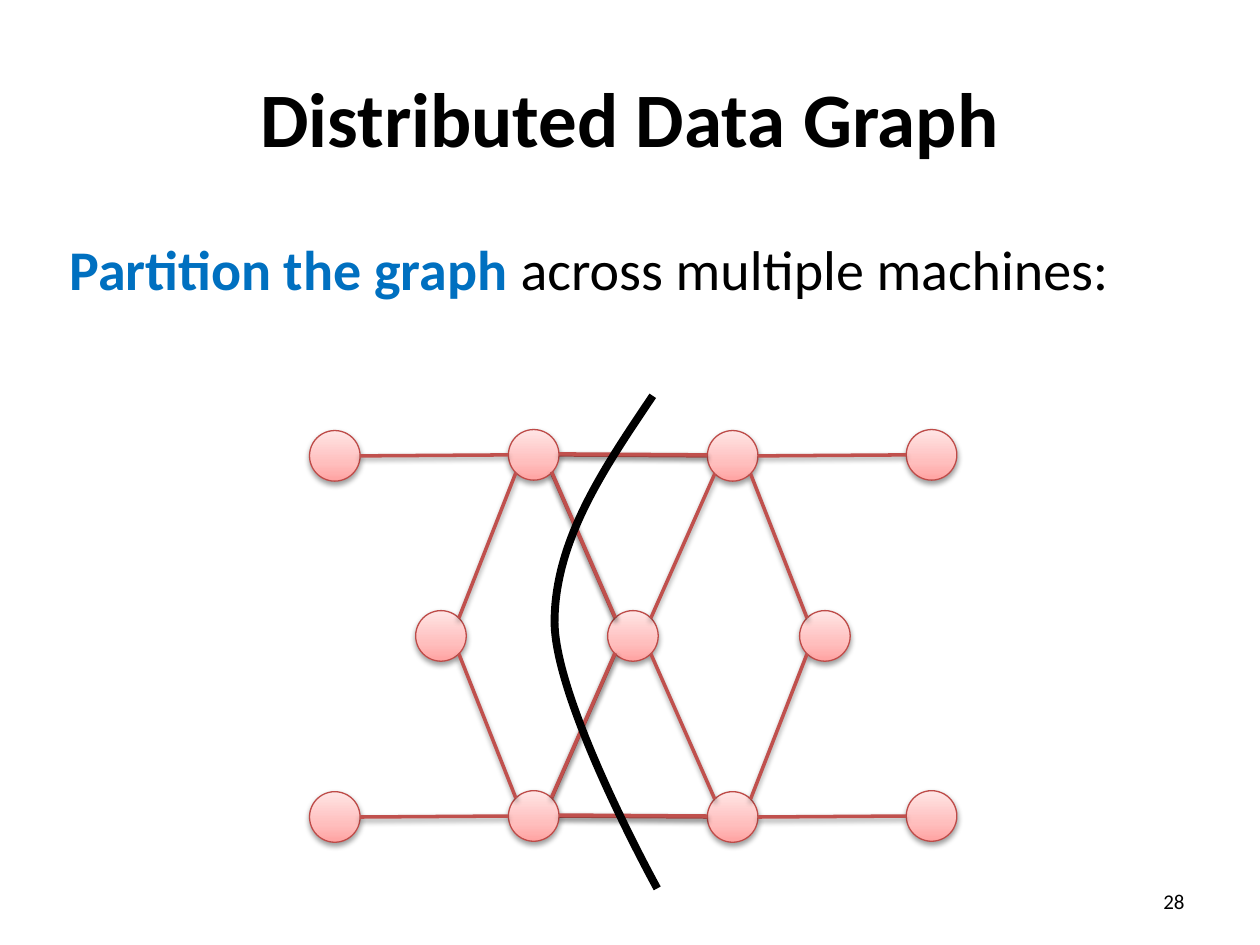
from math import sqrt
from lxml.etree import SubElement
from pptx import Presentation
from pptx.dml.color import RGBColor
from pptx.enum.shapes import MSO_CONNECTOR, MSO_SHAPE
from pptx.enum.text import MSO_ANCHOR, MSO_AUTO_SIZE, PP_ALIGN
from pptx.oxml import parse_xml
from pptx.oxml.ns import nsdecls, qn
from pptx.util import Cm, Pt

# Content
TITLE = "Distributed Data Graph"
LEAD = [("Partition the graph ", "key", True),
        ("across multiple machines:", "text", False)]
PAGE = "28"
# Each half of the graph: its nodes, then its edges.
# T, M and B are the top, middle and bottom rows; digits count columns.
HALVES = [
    ("M1 M2 B3 B2 T3 T2", "T2-T3 M2-T2 M1-T2 B2-B3 B2-M2 B2-M1"),
    ("M0 B1 B0 T1 T0", "T0-T1 M0-T1 B0-B1 B1-M0"),
]
# Edges across the cut belong to both halves, the second set a hair higher
CROSS = "T1-T2 B1-B2 M1-T1 B1-M1"
CUT = [(13.16, 7.98), (12.17, 9.45), (11.18, 10.9), (11.18, 12.55),
       (11.2, 14.2), (13.25, 17.91), (13.25, 17.91)]

# Theme
THEME = {
    "font": "Calibri", "text": "000000", "key": "0070C0",
    "edge": "C0504D", "rim": "BE4B48",
    "grad": [(0, "FFE5E5"), (65, "FFBEBD"), (100, "FFA2A1")],
    "title": 44, "lead": 32, "page": 12,
    "edge_w": 2, "rim_w": 0.75, "cut_w": 4.5,
}

# Layout in cm: first x, column step, y of each row
ROWS = {"T": (6.75, 4.01, 9.17), "M": (8.89, 3.87, 12.82),
        "B": (6.75, 4.01, 16.45)}
RAD = 0.51
JOG = 0.02


def rgb(name):
    return RGBColor.from_string(THEME[name])


def style(font, size, color="text", bold=False):
    font.name, font.size, font.bold = THEME["font"], Pt(THEME[size]), bold
    font.color.rgb = rgb(color)


def spot(name):
    left, step, y = ROWS[name[0]]
    col = int(name[1])
    jog = JOG if name[0] != "M" and col % 2 == 0 else 0
    return left + col * step, y + jog


def rim(here, there, lift):
    """Point on the rim of one node that faces another node."""
    (x, y), (u, v) = spot(here), spot(there)
    side = 1 if u > x else -1
    if here[0] == there[0]:
        return Cm(x + side * RAD), Cm(y - lift)
    reach = RAD / sqrt(2)
    drop = reach if v > y else -reach
    return Cm(x + side * reach), Cm(y + drop - lift)


def shade(shape):
    shape._element.spPr.append(parse_xml(
        f'<a:effectLst {nsdecls("a")}><a:outerShdw blurRad="40000" dist="20000"'
        ' dir="5400000" rotWithShape="0"><a:srgbClr val="000000">'
        '<a:alpha val="38000"/></a:srgbClr></a:outerShdw></a:effectLst>'))


def add_node(shapes, name):
    x, y = spot(name)
    node = shapes.add_shape(MSO_SHAPE.OVAL, Cm(x - RAD), Cm(y - RAD),
                            Cm(2 * RAD), Cm(2 * RAD))
    stops = "".join(f'<a:gs pos="{pos * 1000}"><a:srgbClr val="{tone}"/></a:gs>'
                    for pos, tone in THEME["grad"])
    node._element.spPr.insert(2, parse_xml(
        f'<a:gradFill {nsdecls("a")} rotWithShape="1"><a:gsLst>{stops}</a:gsLst>'
        '<a:lin ang="5400000" scaled="0"/></a:gradFill>'))
    node.line.color.rgb = rgb("rim")
    node.line.width = Pt(THEME["rim_w"])
    shade(node)


def add_edge(shapes, pair, lift=0):
    a, b = pair.split("-")
    edge = shapes.add_connector(MSO_CONNECTOR.STRAIGHT,
                                *rim(a, b, lift), *rim(b, a, lift))
    edge.line.color.rgb = rgb("edge")
    edge.line.width = Pt(THEME["edge_w"])
    shade(edge)


def add_cut(shapes):
    pts = [(Cm(x), Cm(y)) for x, y in CUT]
    pen = shapes.build_freeform(*pts[0])
    pen.add_line_segments(pts[1:], close=False)
    cut = pen.convert_to_shape()
    # Each three straight segments become one Bezier segment
    track = next(cut._element.iter(qn("a:path")))
    lines = track.findall(qn("a:lnTo"))
    for i in range(0, len(lines), 3):
        bend = SubElement(track, qn("a:cubicBezTo"))
        for line in lines[i:i + 3]:
            bend.append(line[0])
            track.remove(line)
    cut.fill.background()
    cut.line.color.rgb = rgb("text")
    cut.line.width = Pt(THEME["cut_w"])
    cut.shadow.inherit = False


def add_text(shapes, *box):
    frame = shapes.add_textbox(*map(Cm, box)).text_frame
    frame.word_wrap = True
    return frame


def main():
    deck = Presentation()
    deck.slide_width, deck.slide_height = Cm(25.4), Cm(19.05)
    shapes = deck.slides.add_slide(deck.slide_layouts[5]).shapes

    # Title
    title = shapes.title
    title.left, title.top, title.width, title.height = map(
        Cm, (1.27, 0.76, 22.86, 3.18))
    title.text_frame.text = TITLE
    title.text_frame.vertical_anchor = MSO_ANCHOR.MIDDLE
    head = title.text_frame.paragraphs[0]
    head.alignment = PP_ALIGN.CENTER
    style(head.font, "title", bold=True)

    # Page number
    frame = add_text(shapes, 18.2, 17.66, 5.93, 1.01)
    frame.vertical_anchor = MSO_ANCHOR.MIDDLE
    para = frame.paragraphs[0]
    para.text, para.alignment = PAGE, PP_ALIGN.RIGHT
    style(para.font, "page")

    # Lead line
    frame = add_text(shapes, 1.15, 4.6, 22.2, 1.62)
    frame.auto_size = MSO_AUTO_SIZE.SHAPE_TO_FIT_TEXT
    for text, color, bold in LEAD:
        run = frame.paragraphs[0].add_run()
        run.text = text
        style(run.font, "lead", color, bold)

    # Graph halves and the cut between them
    for i, (nodes, edges) in enumerate(HALVES):
        half = shapes.add_group_shape().shapes
        for name in nodes.split():
            add_node(half, name)
        for pair in edges.split():
            add_edge(half, pair)
        for pair in CROSS.split():
            add_edge(half, pair, i * JOG)
    add_cut(shapes)

    deck.save("out.pptx")


if __name__ == "__main__":
    main()
